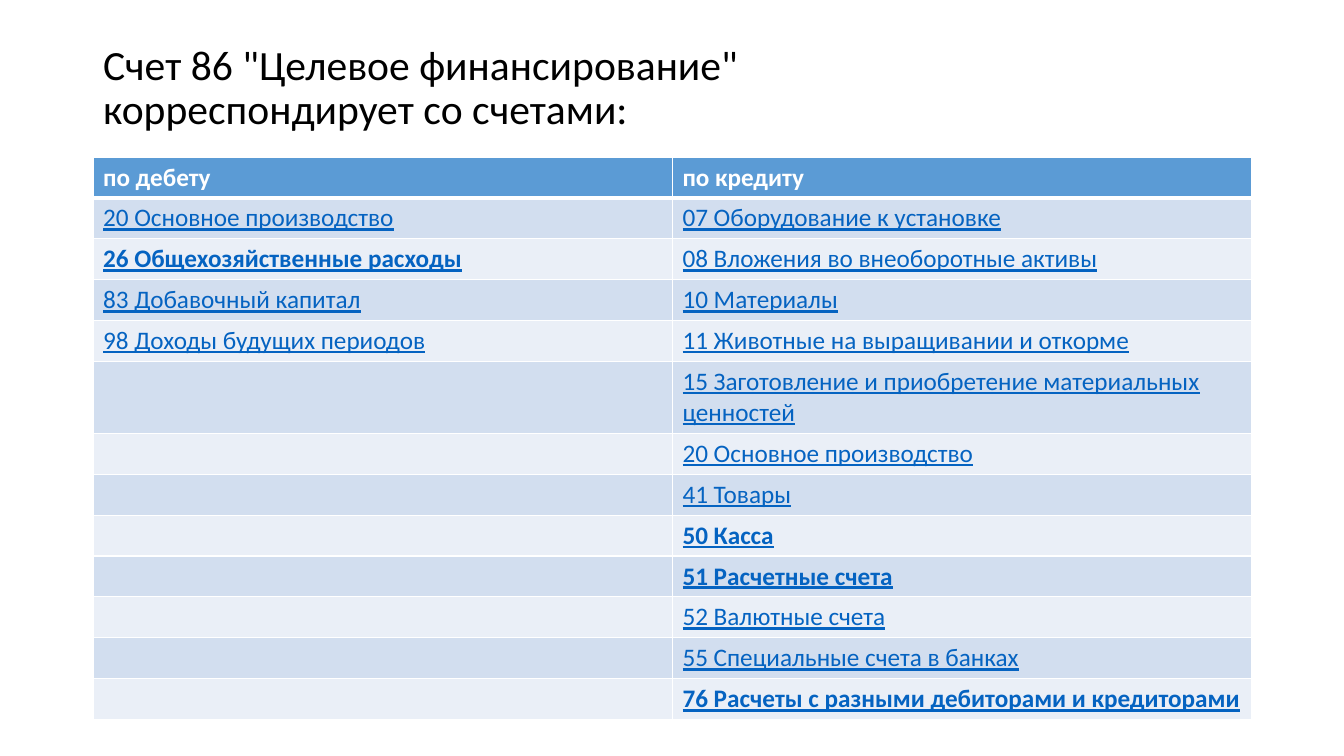
from lxml import etree
from pptx import Presentation
from pptx import util as u
from pptx.dml.color import RGBColor
from pptx.enum import text
from pptx.oxml.ns import qn

PX = 914400 / 100.8


def px(n):
    return u.Emu(round(n * PX))


def write(frame, words, size=18, color="000000", bold=False, line=False, space=None):
    par = frame.paragraphs[0]
    par.text = words
    par.alignment = text.PP_ALIGN.LEFT
    if space:
        par.line_spacing = space
    for run in par.runs:
        font = run.font
        font.name, font.size = "Calibri", u.Pt(size)
        font.bold, font.underline = bold, line
        font.color.rgb = RGBColor.from_string(color)


debit = ["20 Основное производство", "26 Общехозяйственные расходы",
         "83 Добавочный капитал", "98 Доходы будущих периодов"]
credit = ["07 Оборудование к установке", "08 Вложения во внеоборотные активы",
          "10 Материалы", "11 Животные на выращивании и откорме",
          "15 Заготовление и приобретение материальных ценностей",
          "20 Основное производство", "41 Товары", "50 Касса",
          "51 Расчетные счета", "52 Валютные счета",
          "55 Специальные счета в банках",
          "76 Расчеты с разными дебиторами и кредиторами"]
debit += [""] * (len(credit) - len(debit))
rows = [("по дебету", "по кредиту"), *zip(debit, credit)]
strong = ("26", "50", "51", "76")

deck = Presentation()
deck.slide_width, deck.slide_height = px(1344), px(756)
slide = deck.slides.add_slide(deck.slide_layouts[5])

# Title
title = slide.shapes.title
title.left, title.top, title.width, title.height = px(93), px(44), px(1159), px(90)
frame = title.text_frame
frame.word_wrap = True
frame.auto_size = text.MSO_AUTO_SIZE.NONE
frame.vertical_anchor = text.MSO_ANCHOR.MIDDLE
frame.margin_top = frame.margin_bottom = 0
write(frame, 'Счет 86 "Целевое финансирование"\vкорреспондирует со счетами:',
      size=29.7, space=0.9)

# Table of accounts
table = slide.shapes.add_table(len(rows), 2, px(93), px(157), px(1159), px(552)).table
for col in table.columns:
    col.width = px(579.5)
for r, row in enumerate(rows):
    table.rows[r].height = px(72 if r == 5 else 40)
    for c, words in enumerate(row):
        cell = table.cell(r, c)
        head = r == 0
        write(cell.text_frame, words, color="FFFFFF" if head else "0563C1",
              bold=head or words.startswith(strong), line=not head)

        # White borders go before the fill
        props = cell._tc.get_or_add_tcPr()
        for side in ("lnL", "lnR", "lnT", "lnB"):
            thick = (head and side == "lnB") or (r == 1 and side == "lnT")
            edge = etree.SubElement(props, qn("a:" + side), w=str(u.Pt(3 if thick else 1)))
            paint = etree.SubElement(edge, qn("a:solidFill"))
            etree.SubElement(paint, qn("a:srgbClr"), val="FFFFFF")
        cell.fill.solid()
        shade = "5B9BD5" if head else ("EAEFF7", "D2DEEF")[r % 2]
        cell.fill.fore_color.rgb = RGBColor.from_string(shade)

deck.save("out.pptx")
